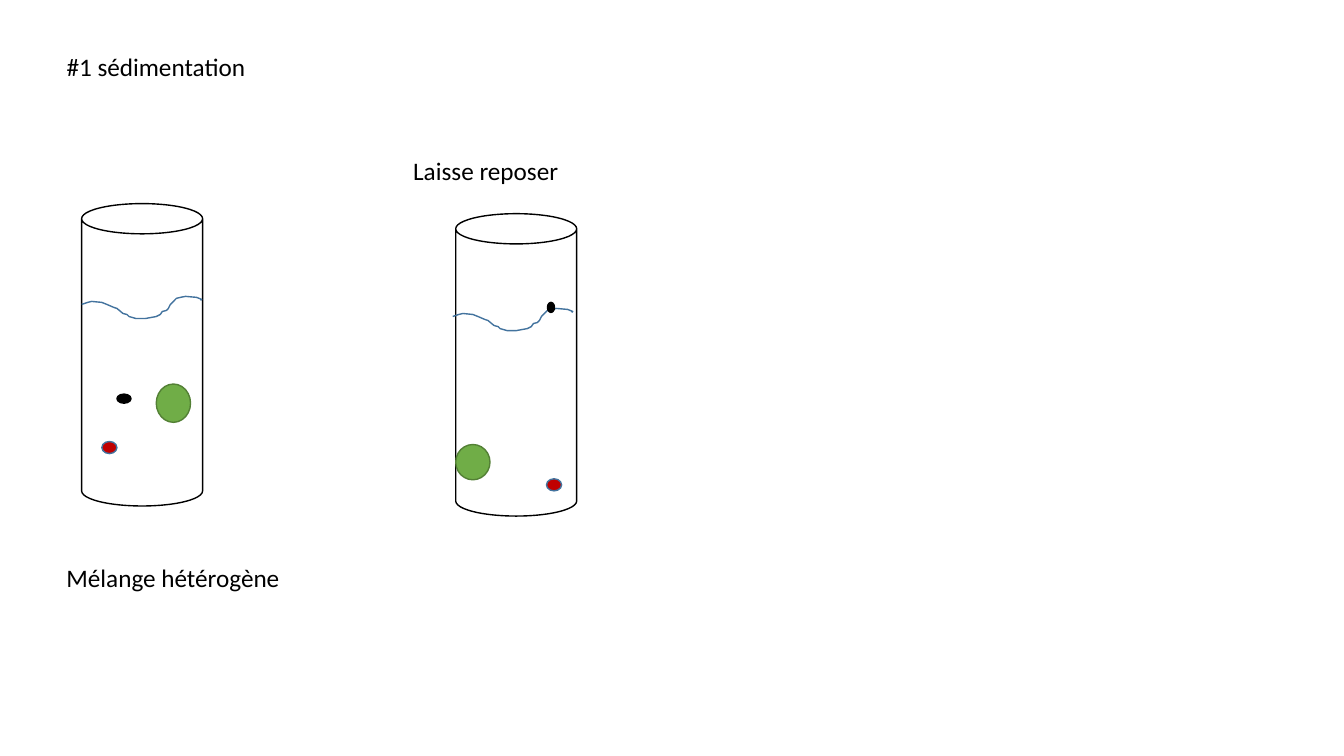
from dataclasses import dataclass

from pptx import Presentation
from pptx.dml.color import RGBColor
from pptx.enum.shapes import MSO_SHAPE as Preset
from pptx.enum.text import MSO_ANCHOR as Anchor, MSO_AUTO_SIZE as AutoSize, PP_ALIGN as Align
from pptx.util import Inches, Pt


@dataclass(frozen=True)
class Theme:
    font: str = "Calibri"
    text_size: int = 18
    line_width: int = 1
    black: str = "000000"
    white: str = "FFFFFF"
    blue: str = "43739E"
    green: str = "70AD47"
    dark_green: str = "538035"
    red: str = "C00000"


THEME = Theme()

# Water surface, in inches from the top left corner of the wave
WAVE = [
    (0, 0.08), (0.06, 0.06), (0.1, 0.05), (0.2, 0.06), (0.25, 0.08),
    (0.32, 0.11), (0.35, 0.12), (0.41, 0.17), (0.45, 0.18), (0.47, 0.2),
    (0.54, 0.22), (0.63, 0.22), (0.74, 0.2), (0.78, 0.18), (0.8, 0.15),
    (0.84, 0.14), (0.86, 0.12), (0.88, 0.08), (0.94, 0.02), (0.98, 0.01),
    (1.03, 0), (1.14, 0.01), (1.19, 0.03), (1.18, 0.04),
]

# Fill and line of each kind of particle
PARTICLES = {
    "large": (THEME.green, THEME.dark_green),
    "light": (THEME.black, THEME.black),
    "small": (THEME.red, THEME.blue),
}


def paint(shape, fill, line):
    """Give a shape its fill (None for no fill) and outline, without shadow."""
    shape.shadow.inherit = False
    if fill is None:
        shape.fill.background()
    else:
        shape.fill.solid()
        shape.fill.fore_color.rgb = RGBColor.from_string(fill)
    shape.line.color.rgb = RGBColor.from_string(line)
    shape.line.width = Pt(THEME.line_width)


def write(box, text, left, top, width):
    """Place a text box or title and set its single line of text."""
    place = {"left": left, "top": top, "width": width, "height": 0.4}
    for name, value in place.items():
        setattr(box, name, Inches(value))
    frame = box.text_frame
    layout = {
        "text": text,
        "word_wrap": True,
        "auto_size": AutoSize.SHAPE_TO_FIT_TEXT,
        "vertical_anchor": Anchor.TOP,
    }
    for name, value in layout.items():
        setattr(frame, name, value)
    paragraph = frame.paragraphs[0]
    paragraph.alignment = Align.LEFT
    font = paragraph.runs[0].font
    font.name = THEME.font
    font.size = Pt(THEME.text_size)
    font.color.rgb = RGBColor.from_string(THEME.black)


def add_label(slide, text, left, top, width):
    write(slide.shapes.add_textbox(0, 0, 0, 0), text, left, top, width)


def add_preset(slide, preset, bounds, fill, line):
    shape = slide.shapes.add_shape(preset, *map(Inches, bounds))
    paint(shape, fill, line)


def add_wave(slide, left, top):
    start, *rest = [(Inches(left + x), Inches(top + y)) for x, y in WAVE]
    builder = slide.shapes.build_freeform(*start)
    builder.add_line_segments(rest, close=False)
    paint(builder.convert_to_shape(), None, THEME.blue)


def add_cylinder(slide, corner, wave_corner, particles):
    """Draw a cylinder with its water surface and its particles."""
    add_preset(slide, Preset.CAN, (*corner, 1.2, 3), THEME.white, THEME.black)
    add_wave(slide, *wave_corner)
    for kind, bounds in particles.items():
        add_preset(slide, Preset.FLOWCHART_CONNECTOR, bounds, *PARTICLES[kind])


def main():
    deck = Presentation()
    deck.slide_width, deck.slide_height = Inches(13.33), Inches(7.5)
    slide = deck.slides.add_slide(deck.slide_layouts[5])

    write(slide.shapes.title, "#1 sédimentation", 0.56, 0.46, 3.38)
    add_cylinder(slide, (0.81, 2.02), (0.81, 2.94), {
        "large": (1.55, 3.81, 0.34, 0.38),
        "light": (1.16, 3.91, 0.14, 0.09),
        "small": (1.01, 4.38, 0.15, 0.12),
    })
    add_label(slide, "Laisse reposer", 4, 1.49, 2.24)
    add_cylinder(slide, (4.52, 2.12), (4.49, 3.06), {
        "large": (4.52, 4.41, 0.34, 0.35),
        "light": (5.43, 3, 0.07, 0.1),
        "small": (5.42, 4.75, 0.15, 0.12),
    })
    add_label(slide, "Mélange hétérogène", 0.56, 5.53, 3.38)

    deck.save("out.pptx")


if __name__ == "__main__":
    main()
